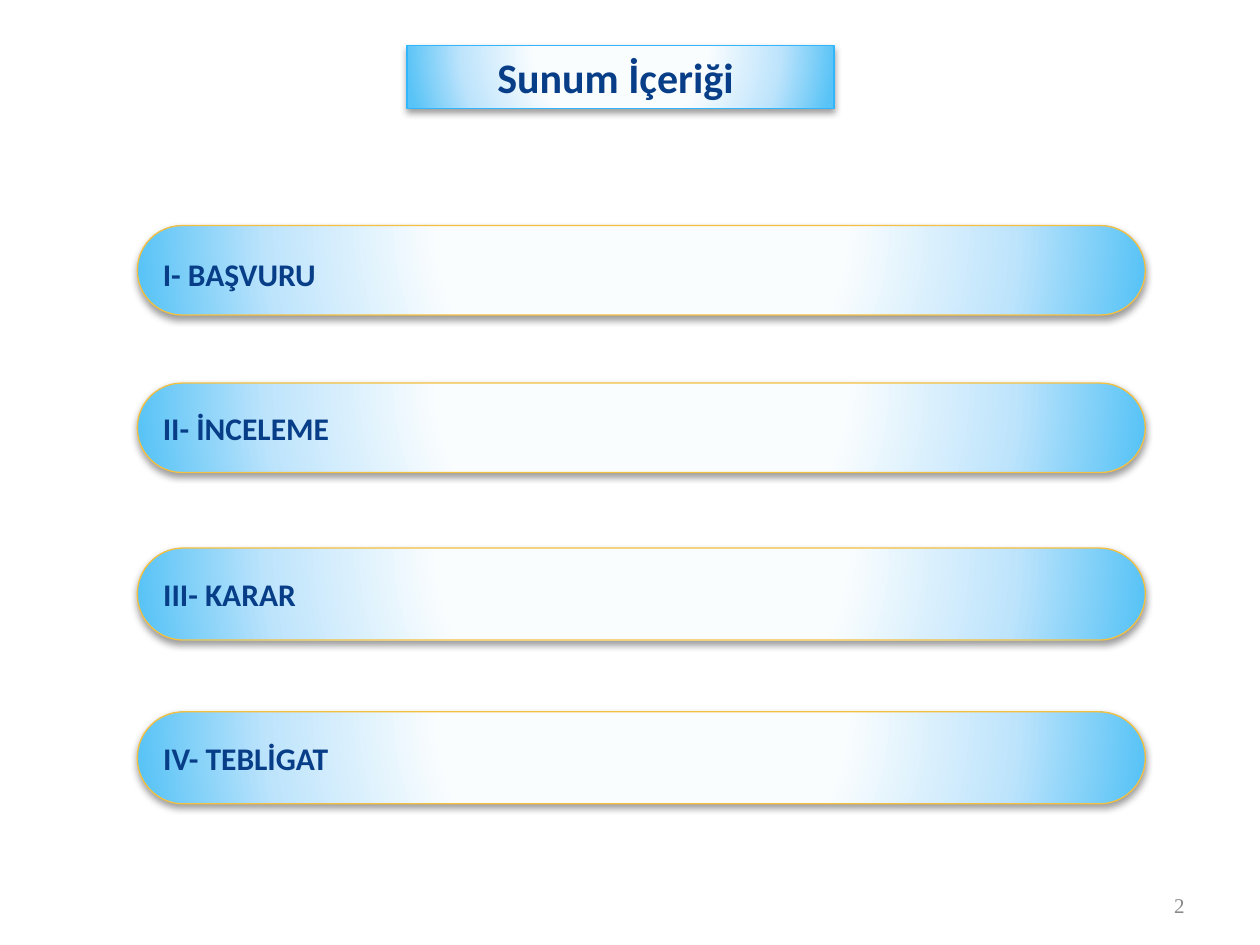
"""Build the contents slide: a title plate, four section bars and a page number."""
from lxml import etree
from pptx import Presentation, util as u
from pptx.dml.color import RGBColor
from pptx.enum import shapes, text
from pptx.oxml import ns

NAVY = RGBColor(0x07, 0x3E, 0x87)
SKY = RGBColor(0x31, 0xB6, 0xFD)
GOLD = RGBColor(0xF5, 0xC0, 0x40)
GREY = RGBColor(0x89, 0x89, 0x89)
GLOW = (
    (40, RGBColor(0xFA, 0xFD, 0xFE)),
    (74, RGBColor(0xBE, 0xE4, 0xFC)),
    (100, RGBColor(0x58, 0xC3, 0xF6)),
)
BAR_LEFT, BAR_WIDTH = 1.09, 8
SECTIONS = (
    ("I- BAŞVURU", 1.79, 0.71, 0.1),
    ("II- İNCELEME", 3.04, 0.71, 0.05),
    ("III- KARAR", 4.35, 0.73, 0.05),
    ("IV- TEBLİGAT", 5.65, 0.73, 0.05),
)


def add_node(parent, tag, **attributes):
    """Append a drawing element with the given attributes."""
    node = etree.SubElement(parent, ns.qn(tag))
    for name, value in attributes.items():
        node.set(name, str(value))
    return node


def place(shape, left, top, width, height):
    """Set a shape's position and size in inches."""
    shape.left, shape.top = u.Inches(left), u.Inches(top)
    shape.width, shape.height = u.Inches(width), u.Inches(height)


def decorate(shape, line_color):
    """Give a shape the radial glow, a thin outline and a soft shadow."""
    properties = shape.element.spPr
    gradient = add_node(properties, "a:gradFill", rotWithShape=1)
    stops = add_node(gradient, "a:gsLst")
    for percent, color in GLOW:
        stop = add_node(stops, "a:gs", pos=percent * 1000)
        add_node(stop, "a:srgbClr", val=color)
    radial = add_node(gradient, "a:path", path="circle")
    add_node(radial, "a:fillToRect", l=20000, t=-40000, r=20000, b=140000)
    shape.line.color.rgb = line_color
    shape.line.width = u.Pt(0.75)
    effects = add_node(properties, "a:effectLst")
    shadow = add_node(effects, "a:outerShdw", blurRad=u.Pt(4), dist=u.Pt(2),
                      dir=5400000, rotWithShape=0)
    shade = add_node(shadow, "a:srgbClr", val="000000")
    add_node(shade, "a:alpha", val=38000)


def write(shape, wording, size, align, color=NAVY, font="Calibri", bold=True):
    """Write one formatted, vertically centred paragraph."""
    frame = shape.text_frame
    frame.text = wording
    frame.vertical_anchor = text.MSO_ANCHOR.MIDDLE
    frame.auto_size = text.MSO_AUTO_SIZE.NONE
    para = frame.paragraphs[0]
    para.alignment = align
    span = para.runs[0].font
    span.name, span.size, span.bold = font, u.Pt(size), bold
    span.color.rgb = color


def add_title(page):
    """Turn the title placeholder into a glowing plate."""
    title = page.shapes.title
    place(title, 3.23, 0.36, 3.39, 0.5)
    decorate(title, SKY)
    write(title, "Sunum İçeriği", 24, text.PP_ALIGN.CENTER)
    title.text_frame.margin_right = u.Inches(0.18)


def add_bar(page, wording, top, height, margin_top):
    """Add one pill-shaped section bar."""
    bar = page.shapes.add_shape(shapes.MSO_SHAPE.ROUNDED_RECTANGLE, 0, 0, 0, 0)
    place(bar, BAR_LEFT, top, BAR_WIDTH, height)
    bar.adjustments[0] = 0.5
    decorate(bar, GOLD)
    write(bar, wording, 18, text.PP_ALIGN.LEFT)
    bar.text_frame.word_wrap = False
    bar.text_frame.margin_top = u.Inches(margin_top)


def add_page_number(page, number):
    """Add the page number at the lower right."""
    box = page.shapes.add_textbox(0, 0, 0, 0)
    place(box, 7.17, 6.98, 2.33, 0.4)
    write(box, str(number), 12, text.PP_ALIGN.RIGHT, GREY, "Times New Roman", False)
    box.text_frame.word_wrap = True


def main():
    """Assemble and save the deck."""
    deck = Presentation()
    deck.slide_width, deck.slide_height = u.Inches(10), u.Inches(7.5)
    page = deck.slides.add_slide(deck.slide_layouts[5])
    add_title(page)
    for section in SECTIONS:
        add_bar(page, *section)
    add_page_number(page, 2)
    deck.save("out.pptx")


if __name__ == "__main__":
    main()
